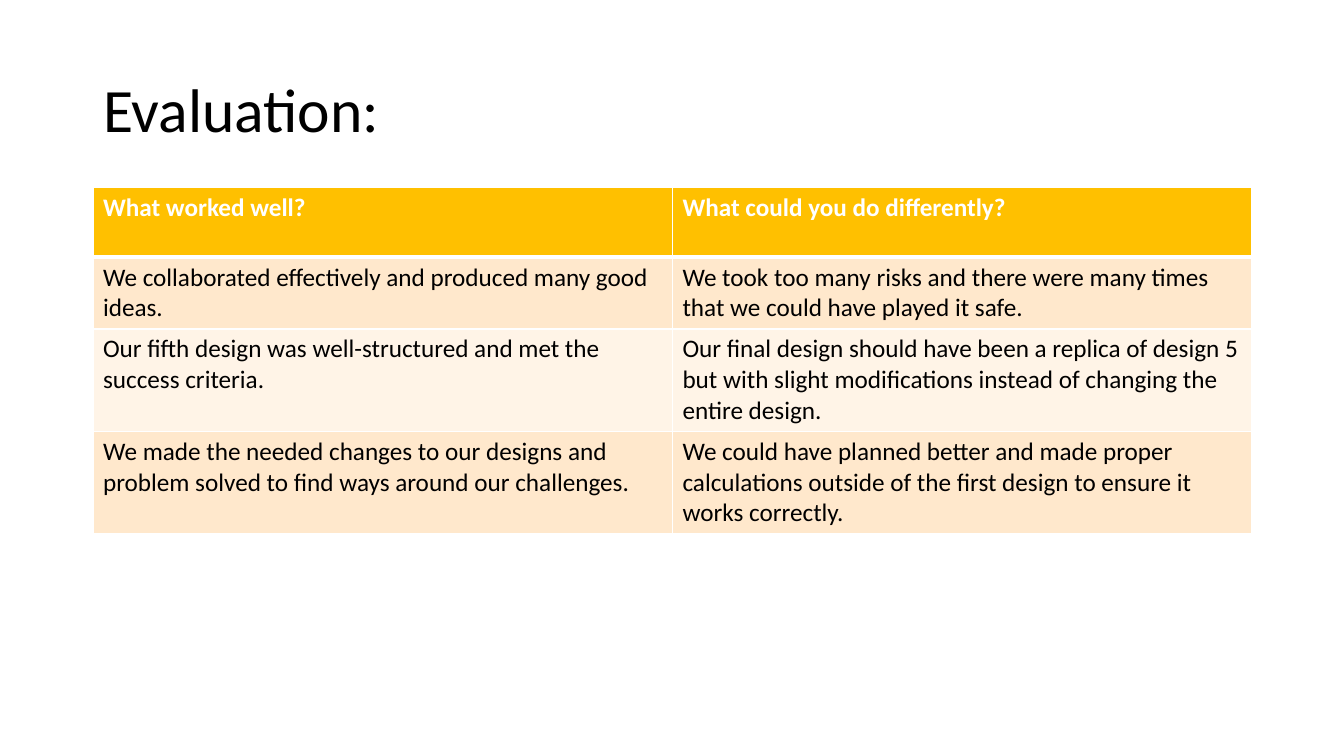
from lxml import etree
from pptx import Presentation
from pptx import util as u
from pptx.dml.color import RGBColor
from pptx.enum import text
from pptx.oxml.ns import qn

TITLE = "Evaluation:"
ROWS = [
    ("What worked well?", "What could you do differently?"),
    ("We collaborated effectively and produced many good ideas.",
     "We took too many risks and there were many times that we could have played it safe."),
    ("Our fifth design was well-structured and met the success criteria.",
     "Our final design should have been a replica of design 5 but with slight "
     "modifications instead of changing the entire design."),
    ("We made the needed changes to our designs and problem solved to find ways "
     "around our challenges.",
     "We could have planned better and made proper calculations outside of the "
     "first design to ensure it works correctly."),
]
HEIGHTS = [70, 72, 102, 102]
HEAD, BANDS = "FFC000", ("FFF4E7", "FFE8CC")
WHITE, BLACK, FONT = "FFFFFF", "000000", "Calibri"
WIDE, HIGH = 1344, 756
LEFT, TOP, SPAN = 93, 187, 1159
SCALE = u.Inches(1) / 100.8


def px(n):
    return u.Emu(round(n * SCALE))


def color(code):
    return RGBColor.from_string(code)


def write(para, words, size, code, bold=False):
    run = para.add_run()
    run.text = words
    font = run.font
    font.name, font.size, font.bold = FONT, u.Pt(size), bold
    font.color.rgb = color(code)


def edge(cell, side, points):
    """Draw a white border on one side of a cell: L, R, T or B."""
    line = etree.SubElement(cell._tc.get_or_add_tcPr(), qn(f"a:ln{side}"),
                            w=str(u.Pt(points)))
    fill = etree.SubElement(line, qn("a:solidFill"))
    etree.SubElement(fill, qn("a:srgbClr"), val=WHITE)


def add_title(slide):
    title = slide.shapes.title
    title.left, title.top = px(LEFT), px(40)
    title.width, title.height = px(SPAN), px(146)
    frame = title.text_frame
    frame.auto_size = text.MSO_AUTO_SIZE.NONE
    frame.vertical_anchor = text.MSO_ANCHOR.MIDDLE
    para = frame.paragraphs[0]
    para.alignment = text.PP_ALIGN.LEFT
    para.line_spacing = 0.9
    write(para, TITLE, 44, BLACK)


def add_grid(slide):
    cols = len(ROWS[0])
    table = slide.shapes.add_table(len(ROWS), cols, px(LEFT), px(TOP),
                                   px(SPAN), px(sum(HEIGHTS))).table
    for col in table.columns:
        col.width = px(SPAN / cols)
    for r, (row, high) in enumerate(zip(ROWS, HEIGHTS)):
        table.rows[r].height = px(high)
        head = r == 0
        for c, words in enumerate(row):
            cell = table.cell(r, c)
            widths = {"L": 1, "R": 1, "T": 3 if r == 1 else 1, "B": 3 if head else 1}
            for side, points in widths.items():
                edge(cell, side, points)
            cell.fill.solid()
            cell.fill.fore_color.rgb = color(HEAD if head else BANDS[r % 2])
            write(cell.text_frame.paragraphs[0], words, 18,
                  WHITE if head else BLACK, head)


def main():
    deck = Presentation()
    deck.slide_width, deck.slide_height = px(WIDE), px(HIGH)
    slide = deck.slides.add_slide(deck.slide_layouts[5])
    add_title(slide)
    add_grid(slide)
    deck.save("out.pptx")


if __name__ == "__main__":
    main()
